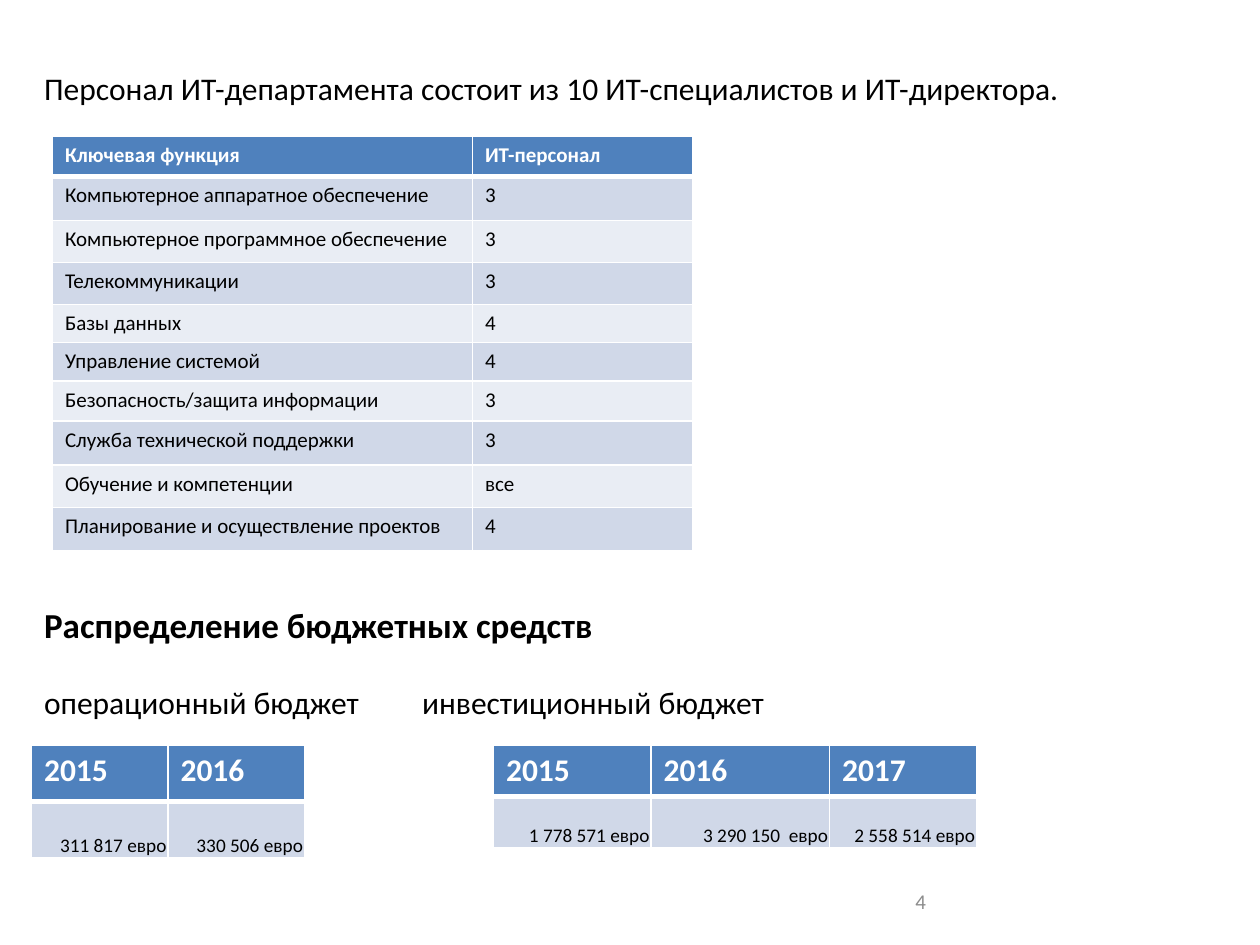
"""Build the slide on IT staffing and budget allocation."""
from dataclasses import dataclass

from lxml.etree import SubElement
from pptx import Presentation
from pptx.dml.color import RGBColor
from pptx.enum.text import MSO_ANCHOR, MSO_AUTO_SIZE, PP_ALIGN
from pptx.oxml import parse_xml
from pptx.oxml.ns import nsdecls, qn
from pptx.slide import Slide
from pptx.table import _Cell
from pptx.text.text import _Paragraph
from pptx.util import Pt

FONT = "Calibri"
BLACK = RGBColor(0x00, 0x00, 0x00)
WHITE = RGBColor(0xFF, 0xFF, 0xFF)
GRAY = RGBColor(0x8C, 0x8C, 0x8C)
HEADER_BLUE = RGBColor(0x4F, 0x81, 0xBD)
BAND_DARK = RGBColor(0xD0, 0xD8, 0xE8)
BAND_LIGHT = RGBColor(0xE9, 0xED, 0xF4)
INVESTMENT_TAB = 257


@dataclass(frozen=True)
class TableSpec:
    left: float
    top: float
    column_widths: tuple[float, ...]
    row_heights: tuple[float, ...]
    rows: tuple[tuple[str, ...], ...]
    header_size: float
    value_size: float
    is_budget: bool


@dataclass(frozen=True)
class TextLine:
    text: str
    size: float
    space_before: float
    bold: bool = False


STAFF = TableSpec(
    30, 78, (240, 126), (23, 25, 24, 24, 20, 20, 23, 25, 24.5, 24.5),
    (
        ("Ключевая функция", "ИТ-персонал"),
        ("Компьютерное аппаратное обеспечение", "3"),
        ("Компьютерное программное обеспечение", "3"),
        ("Телекоммуникации", "3"),
        ("Базы данных", "4"),
        ("Управление системой", "4"),
        ("Безопасность/защита информации", "3"),
        ("Служба технической поддержки", "3"),
        ("Обучение и компетенции", "все"),
        ("Планирование и осуществление проектов", "4"),
    ),
    12, 12, False,
)
OPERATING = TableSpec(
    18, 426, (78, 78), (32, 32),
    (("2015", "2016"), ("311 817 евро", "330 506 евро")),
    18, 11, True,
)
INVESTMENT = TableSpec(
    282, 426, (90, 102, 84), (29.2, 29.2),
    (
        ("2015", "2016", "2017"),
        ("1 778 571 евро", "3 290 150  евро", "2 558 514 евро"),
    ),
    18, 11, True,
)
LINES = (
    TextLine("Персонал ИТ-департамента состоит из 10 ИТ-специалистов и ИТ-директора.", 18, 0),
    TextLine("Распределение бюджетных средств", 20, 283.5, True),
    TextLine("операционный бюджет\tинвестиционный бюджет", 18, 21.5),
)


def add_run(paragraph: _Paragraph, text: str, size: float, color: RGBColor, bold: bool = False) -> None:
    run = paragraph.add_run()
    run.text = text
    run.font.name = FONT
    run.font.size = Pt(size)
    run.font.bold = bold
    run.font.color.rgb = color


def set_borders(cell: _Cell, top: float, bottom: float) -> None:
    properties = cell._tc.get_or_add_tcPr()
    widths = {"lnL": 1, "lnR": 1, "lnT": top, "lnB": bottom}
    for position, (tag, width) in enumerate(widths.items()):
        border = parse_xml(
            f'<a:{tag} {nsdecls("a")} w="{Pt(width)}"><a:solidFill>'
            f'<a:srgbClr val="{WHITE}"/></a:solidFill></a:{tag}>'
        )
        properties.insert(position, border)


def add_table(slide: Slide, spec: TableSpec) -> None:
    frame = slide.shapes.add_table(
        len(spec.row_heights), len(spec.column_widths), Pt(spec.left), Pt(spec.top),
        Pt(sum(spec.column_widths)), Pt(sum(spec.row_heights)),
    )
    table = frame.table
    for column, width in zip(table.columns, spec.column_widths):
        column.width = Pt(width)
    for row_index, texts in enumerate(spec.rows):
        table.rows[row_index].height = Pt(spec.row_heights[row_index])
        is_header = row_index == 0
        band = BAND_DARK if row_index % 2 else BAND_LIGHT
        for column_index, text in enumerate(texts):
            cell = table.cell(row_index, column_index)
            cell.fill.solid()
            cell.fill.fore_color.rgb = HEADER_BLUE if is_header else band
            set_borders(cell, 3 if row_index == 1 else 1, 3 if is_header else 1)
            paragraph = cell.text_frame.paragraphs[0]
            if is_header:
                add_run(paragraph, text, spec.header_size, WHITE, True)
                continue
            if spec.is_budget:
                cell.vertical_anchor = MSO_ANCHOR.BOTTOM
                cell.margin_left = cell.margin_right = cell.margin_top = Pt(0.75)
                cell.margin_bottom = Pt(0)
                paragraph.alignment = PP_ALIGN.RIGHT
            add_run(paragraph, text, spec.value_size, BLACK)


def fill_body(slide: Slide) -> None:
    body = slide.placeholders[1]
    body.left, body.top, body.width, body.height = Pt(18), Pt(36), Pt(666), Pt(470)
    text_frame = body.text_frame
    text_frame.auto_size = MSO_AUTO_SIZE.NONE
    for index, line in enumerate(LINES):
        paragraph = text_frame.add_paragraph() if index else text_frame.paragraphs[0]
        paragraph.space_before = Pt(line.space_before)
        properties = paragraph._p.get_or_add_pPr()
        properties.set("marL", "0")
        properties.set("indent", "0")
        SubElement(properties, qn("a:buNone"))
        if "\t" in line.text:
            tabs = SubElement(properties, qn("a:tabLst"))
            SubElement(tabs, qn("a:tab"), pos=str(Pt(INVESTMENT_TAB)), algn="l")
        add_run(paragraph, line.text, line.size, BLACK, line.bold)


def add_page_number(slide: Slide, number: str) -> None:
    box = slide.shapes.add_textbox(Pt(516), Pt(500.5), Pt(168), Pt(28.75))
    box.text_frame.word_wrap = True
    box.text_frame.vertical_anchor = MSO_ANCHOR.MIDDLE
    add_run(box.text_frame.paragraphs[0], number, 12, GRAY)


def main() -> None:
    presentation = Presentation()
    presentation.slide_width, presentation.slide_height = Pt(720), Pt(540)
    slide = presentation.slides.add_slide(presentation.slide_layouts[1])
    title = slide.shapes.title._element
    title.getparent().remove(title)
    fill_body(slide)
    for spec in (INVESTMENT, OPERATING, STAFF):
        add_table(slide, spec)
    add_page_number(slide, "4")
    presentation.save("out.pptx")


if __name__ == "__main__":
    main()
